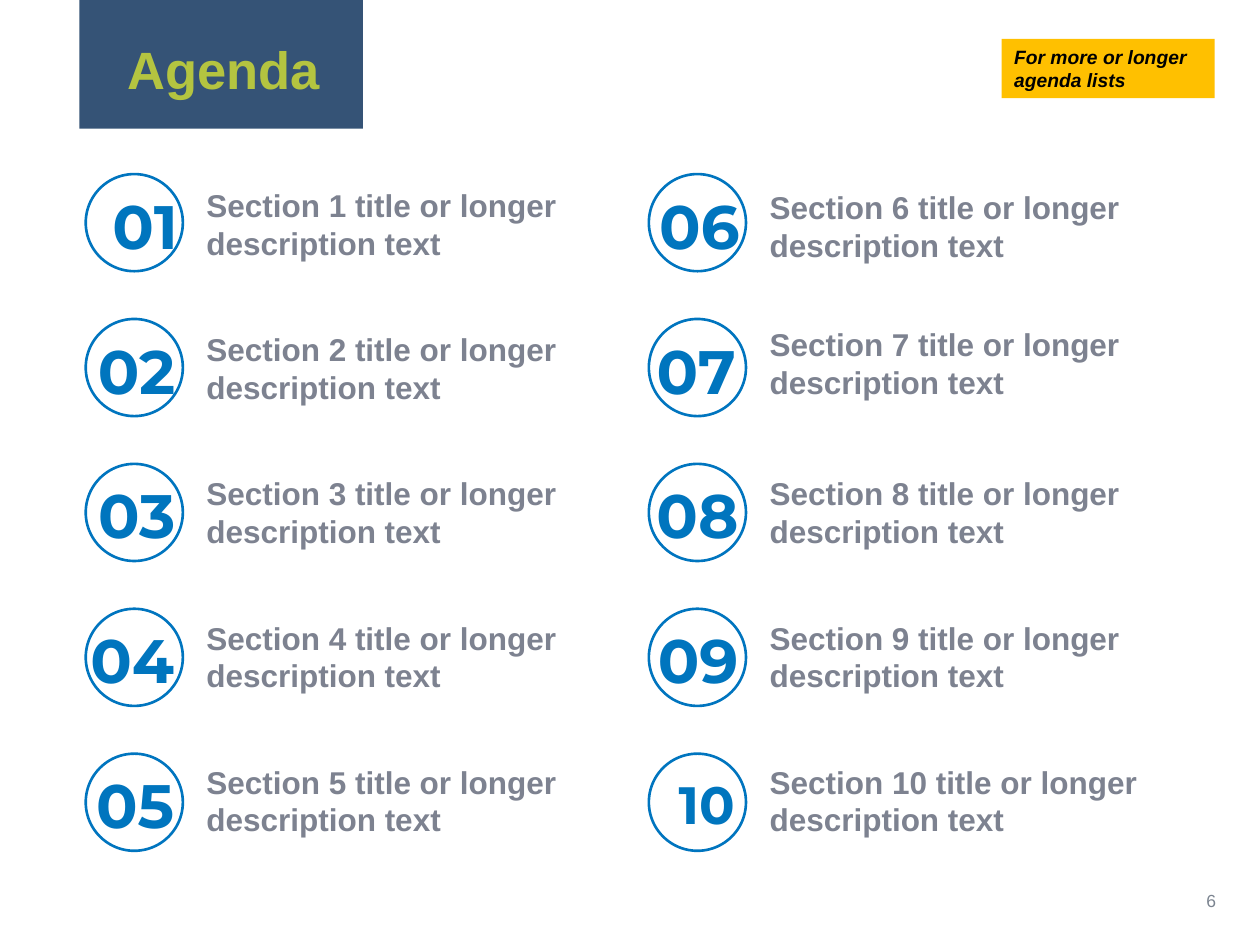
from pptx import Presentation
from pptx.dml.color import RGBColor
from pptx.enum.shapes import MSO_SHAPE
from pptx.enum.text import MSO_ANCHOR, MSO_AUTO_SIZE, PP_ALIGN
from pptx.util import Pt

TITLE = "Agenda"
NOTE = "For more or longer agenda lists"
PAGE_NUMBER = "6"
ROWS = 5
SECTION = "Section {} title or longer description text"
NUMBER_RIGHTS = [59.7, 58.3, 58.3, 57.6, 57.6, 59, 56.9, 58.3, 58.3, 56.2]
SECTION_SHIFTS = {6: 1, 7: -3}

COLUMN_LEFTS = [49, 370.8]
CIRCLE_TOP, CIRCLE_PITCH, CIRCLE_SIZE = 99.5, 82.8, 55.5
SECTION_TOP, SECTION_PITCH, SECTION_OFFSET = 103, 82.3, 61.9
NUMBER_WIDTH = 75

TITLE_FONT = {"name": "Arial", "size": Pt(30), "bold": True}
SECTION_FONT = {"name": "Arial", "size": Pt(18), "bold": True}
NUMBER_FONT = {"name": "Montserrat", "size": Pt(35), "bold": True}
LAST_NUMBER_FONT = {**NUMBER_FONT, "size": Pt(30)}
NOTE_FONT = {"name": "Arial", "size": Pt(11), "bold": True, "italic": True}
PAGE_FONT = {"name": "Arial", "size": Pt(10)}


def rgb(code):
    """Turn a hex string into a colour."""
    return RGBColor.from_string(code)


def write(box, text, font, color, align=PP_ALIGN.LEFT, anchor=MSO_ANCHOR.TOP,
          fit=MSO_AUTO_SIZE.SHAPE_TO_FIT_TEXT):
    """Write one formatted paragraph into a shape."""
    frame = box.text_frame
    layout = {"word_wrap": True, "auto_size": fit, "vertical_anchor": anchor}
    for name, value in layout.items():
        setattr(frame, name, value)
    para = frame.paragraphs[0]
    para.alignment = align
    span = para.add_run()
    span.text = text
    for name, value in font.items():
        setattr(span.font, name, value)
    span.font.color.rgb = rgb(color)


def add_text(page, place, *content, **layout):
    """Add a text box at a place given in points."""
    write(page.shapes.add_textbox(*map(Pt, place)), *content, **layout)


def add_panel(page, kind, place, fill, line=None):
    """Add a flat filled shape with an optional outline."""
    panel = page.shapes.add_shape(kind, *map(Pt, place))
    panel.shadow.inherit = False
    panel.fill.solid()
    panel.fill.fore_color.rgb = rgb(fill)
    if line:
        panel.line.color.rgb = rgb(line)
        panel.line.width = Pt(1.5)
    else:
        panel.line.fill.background()
    return panel


def add_section(page, number):
    """Add the circle, number and description of one section."""
    column, row = divmod(number - 1, ROWS)
    last = number == len(NUMBER_RIGHTS)
    left = COLUMN_LEFTS[column]
    top = CIRCLE_TOP + row * CIRCLE_PITCH
    add_panel(page, MSO_SHAPE.OVAL, (left, top, CIRCLE_SIZE, CIRCLE_SIZE),
              "FFFFFF", "0075BF")
    number_left = left + NUMBER_RIGHTS[number - 1] - NUMBER_WIDTH
    number_top = top + (7.2 if last else 4.3)
    add_text(page, (number_left, number_top, NUMBER_WIDTH, 44 if last else 49.7),
             f"{number:02}", LAST_NUMBER_FONT if last else NUMBER_FONT,
             "0075BE", align=PP_ALIGN.RIGHT)
    section_top = SECTION_TOP + row * SECTION_PITCH + SECTION_SHIFTS.get(number, 0)
    add_text(page, (left + SECTION_OFFSET, section_top, 228 if row == ROWS - 1 else 222, 51),
             SECTION.format(number), SECTION_FONT, "7D8290")


def main():
    """Build the agenda slide."""
    deck = Presentation()
    deck.slide_width, deck.slide_height = Pt(720), Pt(540)
    page = deck.slides.add_slide(deck.slide_layouts[5])
    title = page.shapes.title

    for number in range(1, len(NUMBER_RIGHTS) + 1):
        add_section(page, number)

    banner = add_panel(page, MSO_SHAPE.RECTANGLE, (45.4, 0, 162, 73.6), "355376")
    banner.element.getparent().insert(2, banner.element)
    for name, value in zip(("left", "top", "width", "height"), (65.5, 17.3, 137.5, 44)):
        setattr(title, name, Pt(value))
    write(title, TITLE, TITLE_FONT, "B4C440")

    add_text(page, (540, 500.4, 162, 28.8), PAGE_NUMBER, PAGE_FONT, "7B8490",
             align=PP_ALIGN.RIGHT, anchor=MSO_ANCHOR.MIDDLE, fit=MSO_AUTO_SIZE.NONE)
    note = add_panel(page, MSO_SHAPE.RECTANGLE, (572.4, 22.3, 121.7, 33.8), "FFC000")
    write(note, NOTE, NOTE_FONT, "000000")
    deck.save("out.pptx")


if __name__ == "__main__":
    main()
